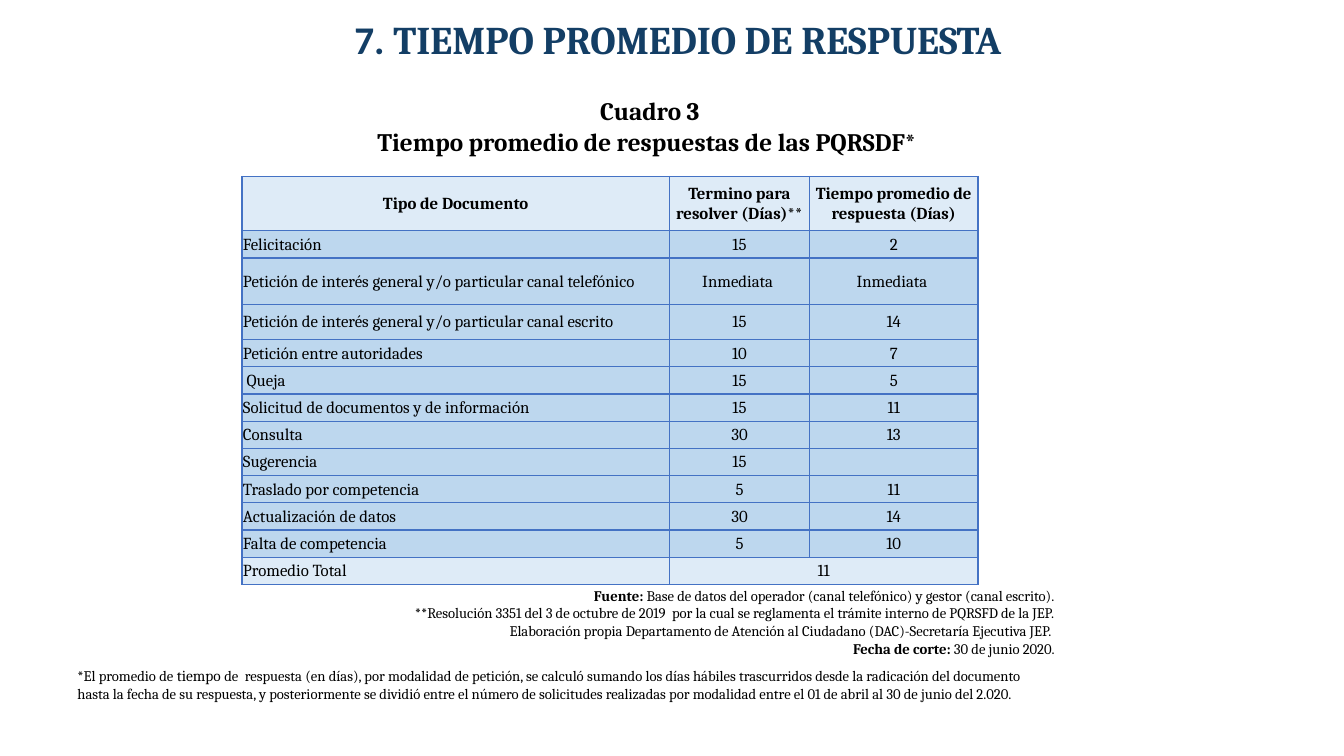
from dataclasses import dataclass

from lxml.etree import SubElement
from pptx import Presentation
from pptx.dml.color import RGBColor
from pptx.enum.text import MSO_ANCHOR, MSO_AUTO_SIZE, PP_ALIGN
from pptx.oxml import parse_xml
from pptx.oxml.ns import nsdecls, qn
from pptx.util import Pt

EMU_PER_PX = 9144


@dataclass(frozen=True)
class Theme:
    font: str = "Cambria"
    number_font: str = "Calibri"
    title_color: str = "133E65"
    text_color: str = "000000"
    border_color: str = "4472C4"
    light_fill: str = "DEEBF7"
    body_fill: str = "BDD7EE"
    title_size: float = 28
    caption_size: float = 18
    table_size: float = 12
    note_size: float = 10.5
    note_accent_size: float = 11


THEME = Theme()

COLUMN_WIDTHS = (424, 139, 167)
ROW_HEIGHT = 27
SPECIAL_ROW_HEIGHTS = {0: 54, 2: 46, 3: 35}
RESPONSE_TIMES = (
    ("Tipo de Documento", "Termino para resolver (Días)**", "Tiempo promedio de respuesta (Días)"),
    ("Felicitación", "15", "2"),
    ("Petición de interés general y/o particular canal telefónico", "Inmediata ", "Inmediata "),
    ("Petición de interés general y/o particular canal escrito", "15", "14"),
    ("Petición entre autoridades", "10", "7"),
    (" Queja", "15", "5"),
    ("Solicitud de documentos y de información", "15", "11"),
    ("Consulta", "30", "13"),
    ("Sugerencia", "15", ""),
    ("Traslado por competencia", "5", "11"),
    ("Actualización de datos", "30", "14"),
    ("Falta de competencia", "5", "10"),
    ("Promedio Total", "11", ""),
)


def px(length):
    return length * EMU_PER_PX


def add_run(paragraph, text, size, bold=False, color=THEME.text_color, font=THEME.font):
    run = paragraph.add_run()
    run.text = text
    run.font.name = font
    run.font.size = Pt(size)
    run.font.bold = bold
    run.font.color.rgb = RGBColor.from_string(color)


def add_title(slide, left, top, width, height):
    title = slide.shapes.title
    title.left, title.top, title.width, title.height = map(px, (left, top, width, height))
    frame = title.text_frame
    frame.auto_size = MSO_AUTO_SIZE.NONE
    frame.word_wrap = True
    frame.vertical_anchor = MSO_ANCHOR.MIDDLE
    paragraph = frame.paragraphs[0]
    paragraph.alignment = PP_ALIGN.CENTER
    paragraph.line_spacing = 0.9
    add_run(paragraph, "7. ", THEME.title_size, True, THEME.title_color, THEME.number_font)
    add_run(paragraph, "TIEMPO PROMEDIO DE RESPUESTA ", THEME.title_size, True, THEME.title_color)


def add_text(slide, left, top, width, height, alignment, lines):
    frame = slide.shapes.add_textbox(*map(px, (left, top, width, height))).text_frame
    frame.word_wrap = True
    for index, runs in enumerate(lines):
        paragraph = frame.add_paragraph() if index else frame.paragraphs[0]
        paragraph.alignment = alignment
        for text, size, bold in runs:
            add_run(paragraph, text, size, bold)


def add_caption(slide, left, top, width, height):
    lines = ("Cuadro 3", "Tiempo promedio de respuestas de las PQRSDF* ")
    add_text(slide, left, top, width, height, PP_ALIGN.CENTER,
             [[(line, THEME.caption_size, True)] for line in lines])


def add_source(slide, left, top, width, height):
    size = THEME.note_size
    add_text(slide, left, top, width, height, PP_ALIGN.RIGHT, [
        [("Fuente:", size, True),
         (" Base de datos del operador (canal telefónico) y gestor (canal escrito).", size, False)],
        [("**Resolución 3351 del 3 de octubre de 2019  por la cual se reglamenta "
          "el trámite interno de PQRSFD de la JEP.", size, False)],
        [("Elaboración propia Departamento de Atención al Ciudadano "
          "(DAC)-Secretaría Ejecutiva JEP. ", size, False)],
        [("Fecha de corte:", size, True), (" 30 de junio 2020.", size, False)],
    ])


def add_footnote(slide, left, top, width, height):
    size = THEME.note_size
    add_text(slide, left, top, width, height, PP_ALIGN.JUSTIFY, [[
        ("*El promedio de ", size, False),
        ("tiempo", THEME.note_accent_size, False),
        (" de  respuesta (en días), por modalidad de petición, se calculó sumando los días "
         "hábiles trascurridos desde la radicación del documento hasta la fecha de su respuesta, "
         "y posteriormente se dividió entre el número de solicitudes realizadas por modalidad "
         "entre el 01 de abril al 30 de junio del 2.020. ", size, False),
    ]])


def add_borders(cell):
    properties = cell._tc.get_or_add_tcPr()
    for index, side in enumerate(("lnL", "lnR", "lnT", "lnB")):
        properties.insert(index, parse_xml(
            f'<a:{side} {nsdecls("a")} w="{Pt(1)}"><a:solidFill>'
            f'<a:srgbClr val="{THEME.border_color}"/></a:solidFill></a:{side}>'))


def format_cell(cell, text, fill, alignment, bold):
    cell.fill.solid()
    cell.fill.fore_color.rgb = RGBColor.from_string(fill)
    cell.vertical_anchor = MSO_ANCHOR.MIDDLE
    cell.margin_left = cell.margin_right = cell.margin_top = px(1)
    cell.margin_bottom = 0
    add_borders(cell)
    paragraph = cell.text_frame.paragraphs[0]
    paragraph.alignment = alignment
    if text:
        add_run(paragraph, text, THEME.table_size, bold)
    else:
        SubElement(paragraph._p, qn("a:endParaRPr"), sz=str(THEME.table_size * 100))


def add_response_table(slide, left, top):
    last_row = len(RESPONSE_TIMES) - 1
    heights = [SPECIAL_ROW_HEIGHTS.get(row, ROW_HEIGHT) for row in range(last_row + 1)]
    table = slide.shapes.add_table(
        len(heights), len(COLUMN_WIDTHS), px(left), px(top),
        px(sum(COLUMN_WIDTHS)), px(sum(heights))).table
    table.first_row = False
    table.horz_banding = False
    for column, width in zip(table.columns, COLUMN_WIDTHS):
        column.width = px(width)
    for row, height in zip(table.rows, heights):
        row.height = px(height)
    for row, values in enumerate(RESPONSE_TIMES):
        fill = THEME.light_fill if row in (0, last_row) else THEME.body_fill
        for column, text in enumerate(values):
            centered = row == 0 or column > 0
            alignment = PP_ALIGN.CENTER if centered else PP_ALIGN.LEFT
            format_cell(table.cell(row, column), text, fill, alignment, row == 0)
    table.cell(last_row, 1).merge(table.cell(last_row, 2))


def add_response_time_slide(presentation):
    slide = presentation.slides.add_slide(presentation.slide_layouts[5])
    add_title(slide, 91, -5, 1171, 93)
    add_caption(slide, 305, 90, 679, 71)
    add_source(slide, 329, 577, 727, 81)
    add_footnote(slide, 67, 656, 956, 64)
    add_response_table(slide, 240, 175)


def main():
    presentation = Presentation()
    presentation.slide_width = px(1333)
    presentation.slide_height = px(750)
    add_response_time_slide(presentation)
    presentation.save("out.pptx")


if __name__ == "__main__":
    main()
